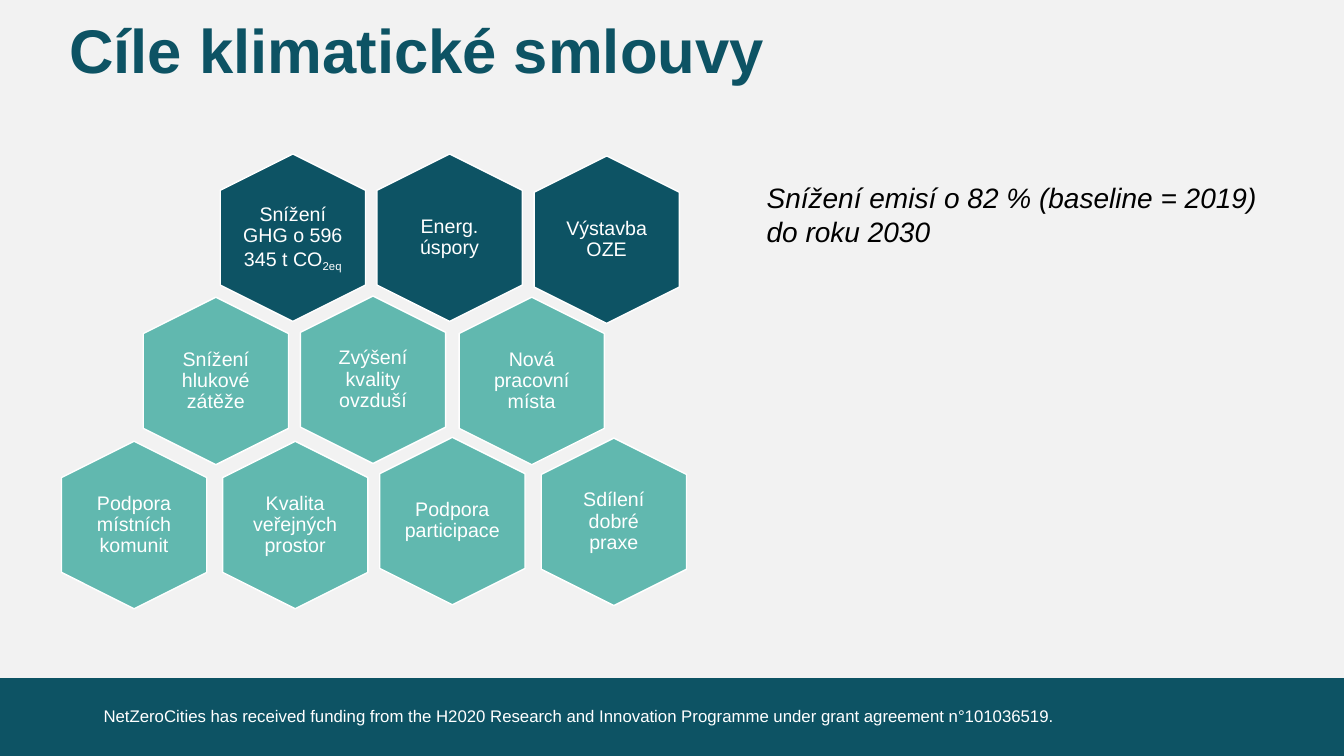
"""Build the slide with the goals of the climate contract."""
from pptx import Presentation, util as u
from pptx.dml.color import RGBColor
from pptx.enum import shapes, text

NAVY, TEAL, WHITE = "0D5364", "61B8AF", "FFFFFF"
HEXAGON_LENGTH, HEXAGON_WIDTH = 4.22, 3.66
LABEL_WIDTH, LABEL_HEIGHT = 2.52, 2.9


def paint(color_format, color):
    color_format.rgb = RGBColor.from_string(color)


def add_text(slide, box, runs, size, color, inset=(0.25, 0.13), spacing=1.0,
             align=text.PP_ALIGN.LEFT, anchor=text.MSO_ANCHOR.TOP):
    shape = slide.shapes.add_textbox(*(u.Cm(length) for length in box))
    frame = shape.text_frame
    frame.word_wrap = True
    frame.vertical_anchor = anchor
    frame.margin_left = frame.margin_right = u.Cm(inset[0])
    frame.margin_top = frame.margin_bottom = u.Cm(inset[1])
    paragraph = frame.paragraphs[0]
    paragraph.alignment = align
    paragraph.line_spacing = spacing
    for words in runs:
        run = paragraph.add_run()
        run.text = words
        run.font.name = "Arial"
        run.font.size = u.Pt(size)
        paint(run.font.color, color)
    return paragraph


presentation = Presentation()
presentation.slide_width = u.Cm(33.87)
presentation.slide_height = u.Cm(19.05)
slide = presentation.slides.add_slide(presentation.slide_layouts[6])
slide.background.fill.solid()
paint(slide.background.fill.fore_color, "F2F2F2")

footer = slide.shapes.add_shape(
    shapes.MSO_SHAPE.RECTANGLE, 0, u.Cm(17.09), presentation.slide_width, u.Cm(1.96))
footer.shadow.inherit = False
footer.fill.solid()
paint(footer.fill.fore_color, NAVY)
footer.line.fill.background()
add_text(slide, (2.36, 17.65, 27.61, 0.76),
         ["NetZeroCities has received funding from the H2020 Research and Innovation "
          "Programme under grant agreement n°101036519."], 12, WHITE)

title = add_text(slide, (1.5, 0, 29.21, 2.69), ["Cíle klimatické smlouvy"], 44, NAVY,
                 spacing=0.9, anchor=text.MSO_ANCHOR.MIDDLE)
title.runs[0].font.bold = True

goals = [
    (7.38, 5.99, NAVY, ["Snížení GHG o 596 345 t CO", "2eq"]),
    (11.33, 5.99, NAVY, ["Energ. úspory"]),
    (15.29, 6.04, NAVY, ["Výstavba OZE"]),
    (5.44, 9.6, TEAL, ["Snížení hlukové zátěže"]),
    (9.4, 9.57, TEAL, ["Zvýšení kvality ovzduší"]),
    (13.4, 9.6, TEAL, ["Nová pracovní místa"]),
    (3.38, 13.23, TEAL, ["Podpora místních komunit"]),
    (7.44, 13.23, TEAL, ["Kvalita veřejných prostor"]),
    (11.4, 13.13, TEAL, ["Podpora participace"]),
    (15.47, 13.15, TEAL, ["Sdílení dobré praxe"]),
]
for center_x, center_y, color, runs in goals:
    hexagon = slide.shapes.add_shape(
        shapes.MSO_SHAPE.HEXAGON,
        u.Cm(center_x - HEXAGON_LENGTH / 2), u.Cm(center_y - HEXAGON_WIDTH / 2),
        u.Cm(HEXAGON_LENGTH), u.Cm(HEXAGON_WIDTH))
    hexagon.rotation = 90
    hexagon.adjustments[0] = 0.25
    hexagon.adjustments[1] = 1.1547
    hexagon.shadow.inherit = False
    hexagon.fill.solid()
    paint(hexagon.fill.fore_color, color)
    paint(hexagon.line.color, WHITE)
    hexagon.line.width = u.Pt(1)
    label = add_text(
        slide, (center_x - LABEL_WIDTH / 2, center_y - LABEL_HEIGHT / 2,
                LABEL_WIDTH, LABEL_HEIGHT),
        runs, 14, WHITE, inset=(0, 0), spacing=0.9,
        align=text.PP_ALIGN.CENTER, anchor=text.MSO_ANCHOR.MIDDLE)
    for subscript in label.runs[1:]:
        subscript.font._element.set("baseline", "-25000")

target = add_text(slide, (19.07, 4.42, 13.54, 1.96),
                  ["Snížení emisí o 82 % (baseline = 2019) do roku 2030"], 20, "000000")
target.runs[0].font.italic = True

presentation.save("out.pptx")
